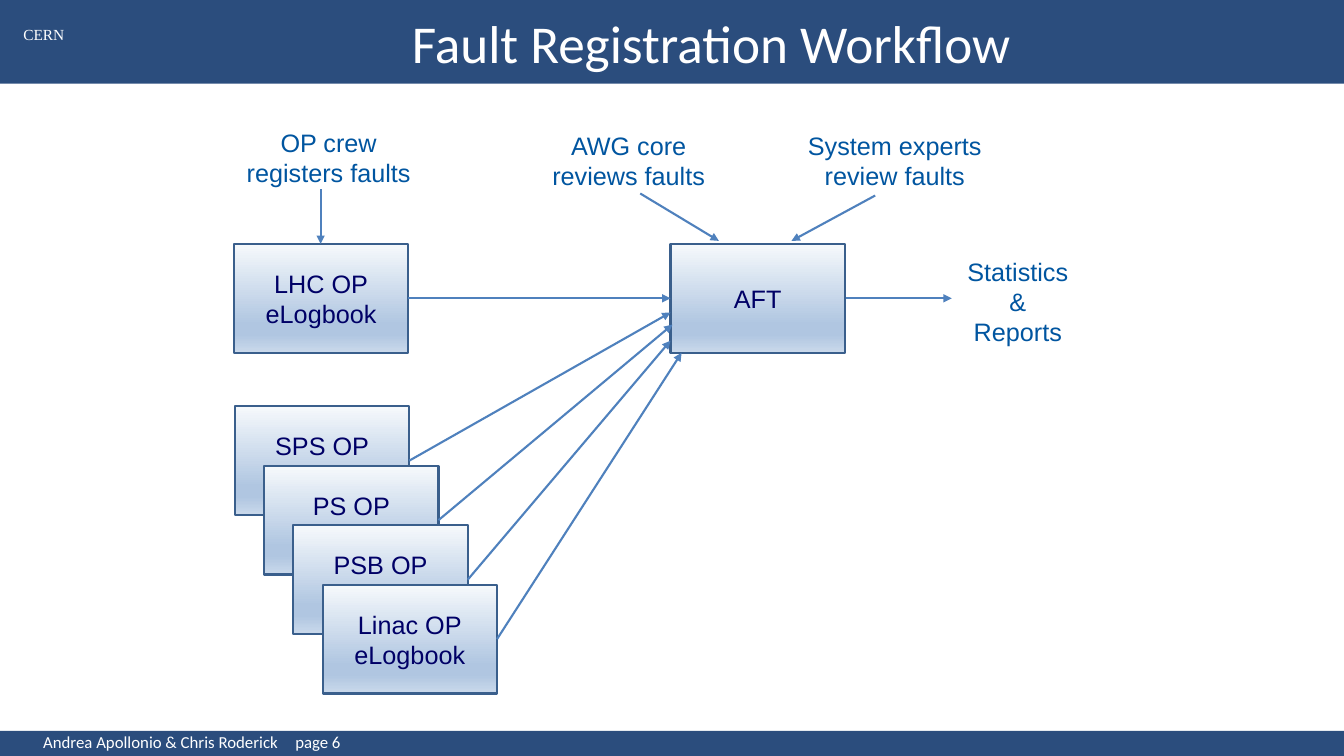
from lxml import etree
from pptx import Presentation
from pptx.dml.color import RGBColor
from pptx.enum.shapes import MSO_CONNECTOR, MSO_SHAPE
from pptx.enum.text import MSO_ANCHOR, MSO_AUTO_SIZE, PP_ALIGN
from pptx.oxml import parse_xml
from pptx.oxml.ns import nsdecls, qn
from pptx.util import Inches, Pt

COLORS = {
    "bar": "062F67",
    "box_line": "3A5F8C",
    "box_text": "000066",
    "arrow": "4F81BD",
    "label": "0055A0",
    "white": "FFFFFF",
}
BOX_GRADIENT = [(0, "F6F9FC"), (74, "B0C6E1"), (83, "B0C6E1"), (100, "CAD9EB")]
BOX_WIDTH, BOX_HEIGHT = 1.73, 1.08
TOP_ROW = 2.42
LOGBOOK_LEFT, AFT_LEFT = 2.32, 6.65
STACK_LEFT, STACK_TOP = 2.33, 4.03
STACK_STEP_X, STACK_STEP_Y = 0.29, 0.59
INJECTORS = [
    ("SPS OP", (6.65, 3.1)),
    ("PS OP", (6.67, 3.22)),
    ("PSB OP", (6.65, 3.38)),
    ("Linac OP", (6.76, 3.5)),
]
LABELS = [
    ("OP crew registers faults", 2.18, 1.21, 2.16, 0.71),
    ("AWG core reviews faults", 5.34, 1.24, 1.79, 0.71),
    ("System experts review faults", 7.71, 1.24, 2.33, 0.71),
    ("Statistics\n&\nReports", 9.2, 2.49, 1.79, 1.01),
]
ARROWS = [
    ((3.18, 1.88), (3.18, 2.42)),
    ((6.35, 1.92), (7.13, 2.39)),
    ((8.68, 1.94), (7.85, 2.39)),
    ((4.05, 2.96), (6.65, 2.96)),
    ((8.39, 2.96), (9.44, 2.96)),
]


def rgb(name):
    """Return the named colour."""
    return RGBColor.from_string(COLORS[name])


def format_text(text_frame, size, font, color, align=PP_ALIGN.CENTER):
    """Format every paragraph and run of a text frame."""
    text_frame.word_wrap = True
    for paragraph in text_frame.paragraphs:
        paragraph.alignment = align
        for run in paragraph.runs:
            run.font.size = Pt(size)
            run.font.name = font
            run.font.color.rgb = rgb(color)


def add_bar(slide, top, height):
    """Add a translucent band across the slide."""
    shape = slide.shapes.add_shape(
        MSO_SHAPE.RECTANGLE, 0, Inches(top), Inches(13.33), Inches(height))
    shape.shadow.inherit = False
    shape.fill.solid()
    shape.fill.fore_color.rgb = rgb("bar")
    shape.line.fill.background()
    color = shape.fill._xPr.find(".//" + qn("a:srgbClr"))
    etree.SubElement(color, qn("a:alpha")).set("val", "85000")


def add_text(slide, text, left, top, width, height, size, font, color):
    """Add a centred text box and return it."""
    box = slide.shapes.add_textbox(
        Inches(left), Inches(top), Inches(width), Inches(height))
    box.text_frame.text = text
    format_text(box.text_frame, size, font, color)
    return box


def add_box(slide, text, left, top):
    """Add a gradient box for one system."""
    shape = slide.shapes.add_shape(
        MSO_SHAPE.RECTANGLE, Inches(left), Inches(top),
        Inches(BOX_WIDTH), Inches(BOX_HEIGHT))
    shape.shadow.inherit = False
    stops = "".join(
        f'<a:gs pos="{position * 1000}"><a:srgbClr val="{color}"/></a:gs>'
        for position, color in BOX_GRADIENT)
    gradient = parse_xml(
        f'<a:gradFill {nsdecls("a")} rotWithShape="1"><a:gsLst>{stops}</a:gsLst>'
        '<a:lin ang="5400000" scaled="0"/></a:gradFill>')
    shape._element.spPr.find(qn("a:prstGeom")).addnext(gradient)
    shape.line.color.rgb = rgb("box_line")
    shape.line.width = Pt(1.5)
    shape.text_frame.text = text
    shape.text_frame.vertical_anchor = MSO_ANCHOR.MIDDLE
    format_text(shape.text_frame, 18, "Arial", "box_text")


def add_arrow(slide, start, end):
    """Add a straight arrow between two points."""
    connector = slide.shapes.add_connector(
        MSO_CONNECTOR.STRAIGHT, *(Inches(value) for value in start + end))
    connector.line.color.rgb = rgb("arrow")
    connector.line.width = Pt(1.5)
    line = connector.line._get_or_add_ln()
    etree.SubElement(line, qn("a:tailEnd")).set("type", "triangle")
    etree.SubElement(connector._element.spPr, qn("a:effectLst"))


def add_footer(slide):
    """Add the authors and the page number on one tabbed line."""
    box = add_text(slide, "Andrea Apollonio & Chris Roderick\tpage 6",
                   0, 7.25, 13.11, 0.26, 12, "Calibri", "white")
    box.text_frame.vertical_anchor = MSO_ANCHOR.BOTTOM
    paragraph = box.text_frame.paragraphs[0]
    paragraph.alignment = PP_ALIGN.LEFT
    properties = paragraph._p.get_or_add_pPr()
    properties.set("marL", str(Inches(0.33)))
    properties.set("indent", "0")
    tabs = etree.SubElement(properties, qn("a:tabLst"))
    tab = etree.SubElement(tabs, qn("a:tab"))
    tab.set("pos", str(Inches(9.72)))
    tab.set("algn", "l")


def set_title(slide, text):
    """Place the title in front of the top bar."""
    title = slide.shapes.title
    title.left, title.top = Inches(1.23), Inches(0)
    title.width, title.height = Inches(11.65), Inches(0.83)
    title.text_frame.text = text
    title.text_frame.vertical_anchor = MSO_ANCHOR.MIDDLE
    title.text_frame.auto_size = MSO_AUTO_SIZE.NONE
    format_text(title.text_frame, 38, "Calibri", "white")
    slide.shapes._spTree.append(title._element)


def main():
    """Build the workflow slide."""
    presentation = Presentation()
    presentation.slide_width = Inches(13.33)
    presentation.slide_height = Inches(7.5)
    slide = presentation.slides.add_slide(presentation.slide_layouts[5])
    add_bar(slide, 0, 0.83)
    add_bar(slide, 7.25, 0.25)
    add_text(slide, "CERN", -0.01, 0.2, 0.89, 0.29, 11, "Times New Roman", "white")
    add_footer(slide)
    add_box(slide, "LHC OP\neLogbook", LOGBOOK_LEFT, TOP_ROW)
    add_box(slide, "AFT", AFT_LEFT, TOP_ROW)
    for text, left, top, width, height in LABELS:
        add_text(slide, text, left, top, width, height, 18, "Arial", "label")
    for start, end in ARROWS:
        add_arrow(slide, start, end)
    for index, (name, target) in enumerate(INJECTORS):
        left = STACK_LEFT + index * STACK_STEP_X
        top = STACK_TOP + index * STACK_STEP_Y
        add_box(slide, f"{name}\neLogbook", left, top)
        add_arrow(slide, (left + BOX_WIDTH, top + BOX_HEIGHT / 2), target)
    set_title(slide, "Fault Registration Workflow")
    presentation.save("out.pptx")


if __name__ == "__main__":
    main()
